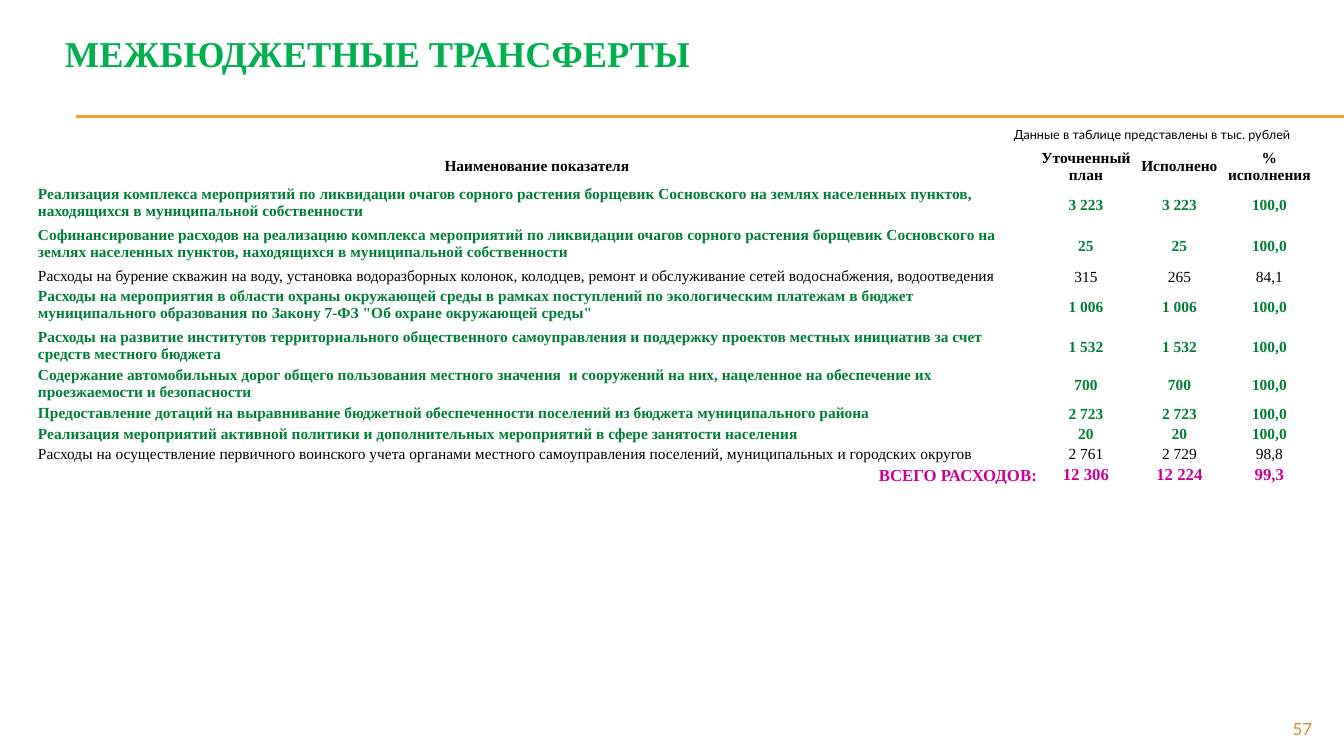
"""Builds the slide on inter-budget transfers with its table of expenses."""
import pptx
import pptx.util
import pptx.dml.color
import pptx.enum.shapes
import pptx.enum.text
import pptx.oxml

PX = 12192000 / 1344
SERIF, SANS = "Times New Roman", "Lato"
HUES = {"title": "00B050", "rule": "F0A22E", "green": "007E39",
        "black": "000000", "total": "CC0099", "page": "D48F29"}
ALIGN = pptx.enum.text.PP_ALIGN
ANCHOR = pptx.enum.text.MSO_ANCHOR


def px(count):
    return round(count * PX)


def write(frame, text, size, face, hue, bold=False, align=ALIGN.LEFT):
    par = frame.paragraphs[0]
    par.alignment = align
    run = par.add_run()
    run.text = text
    run.font.size = pptx.util.Pt(size)
    run.font.name = face
    run.font.bold = bold
    run.font.color.rgb = pptx.dml.color.RGBColor.from_string(HUES[hue])


deck = pptx.Presentation()
deck.slide_width, deck.slide_height = px(1344), px(756)
slide = deck.slides.add_slide(deck.slide_layouts[6])
shapes = slide.shapes

for y in (116, 117):
    rule = shapes.add_connector(pptx.enum.shapes.MSO_CONNECTOR.STRAIGHT,
                                px(76), px(y), px(1344), px(y))
    rule.line.color.rgb = pptx.dml.color.RGBColor.from_string(HUES["rule"])
    rule.line.width = pptx.util.Pt(0.75)
    props = rule.element.spPr
    props.append(pptx.oxml.parse_xml(
        '<a:effectLst xmlns:a="http://schemas.openxmlformats.org/drawingml/2006/main"/>'))

title = shapes.add_textbox(px(55), px(16), px(1221), px(73)).text_frame
title.word_wrap = True
title.vertical_anchor = ANCHOR.MIDDLE
write(title, "МЕЖБЮДЖЕТНЫЕ ТРАНСФЕРТЫ", 26, SERIF, "title", True)

ROWS = [
    (35, "black", True, "Наименование показателя", "Уточненный план", "Исполнено", "% исполнения"),
    (41, "green", True, "Реализация комплекса мероприятий по ликвидации очагов сорного растения борщевик "
     "Сосновского на землях населенных пунктов, находящихся в муниципальной собственности",
     "3 223", "3 223", "100,0"),
    (41, "green", True, "Софинансирование расходов на реализацию комплекса мероприятий по ликвидации очагов "
     "сорного растения борщевик Сосновского на землях населенных пунктов, находящихся в "
     "муниципальной собственности", "25", "25", "100,0"),
    (20, "black", False, "Расходы на бурение скважин на воду, установка водоразборных колонок, колодцев, "
     "ремонт и обслуживание сетей водоснабжения, водоотведения", "315", "265", "84,1"),
    (41, "green", True, "Расходы на мероприятия в области охраны окружающей среды в рамках поступлений по "
     "экологическим платежам в бюджет муниципального образования по Закону 7-ФЗ "
     "\"Об охране окружающей среды\"", "1 006", "1 006", "100,0"),
    (35, "green", True, "Расходы на развитие институтов территориального общественного самоуправления и "
     "поддержку проектов местных инициатив за счет средств местного бюджета",
     "1 532", "1 532", "100,0"),
    (38, "green", True, "Содержание автомобильных дорог общего пользования местного значения  и сооружений "
     "на них, нацеленное на обеспечение их проезжаемости и безопасности", "700", "700", "100,0"),
    (21, "green", True, "Предоставление дотаций на выравнивание бюджетной обеспеченности поселений из "
     "бюджета муниципального района", "2 723", "2 723", "100,0"),
    (19, "green", True, "Реализация мероприятий активной политики и дополнительных мероприятий в сфере "
     "занятости населения", "20", "20", "100,0"),
    (19, "black", False, "Расходы на осуществление первичного воинского учета органами местного "
     "самоуправления поселений, муниципальных и городских округов", "2 761", "2 729", "98,8"),
    (21, "total", True, "ВСЕГО РАСХОДОВ:", "12 306", "12 224", "99,3"),
]
WIDTHS = [1000, 98, 89, 91]
LAST = len(ROWS) - 1

table = shapes.add_table(len(ROWS), len(WIDTHS), px(37), px(148), px(sum(WIDTHS)),
                         px(sum(row[0] for row in ROWS))).table
table.first_row = table.horz_banding = False
for col, width in zip(table.columns, WIDTHS):
    col.width = px(width)

for r, (height, hue, bold, *texts) in enumerate(ROWS):
    table.rows[r].height = px(height)
    for c, text in enumerate(texts):
        cell = table.cell(r, c)
        cell.fill.background()
        item = c == 0 and 0 < r < LAST
        side = px(1) if item else 0
        cell.margin_left = cell.margin_right = cell.margin_top = side
        cell.margin_bottom = 0
        cell.vertical_anchor = ANCHOR.TOP if item else ANCHOR.MIDDLE
        align = ALIGN.LEFT if item else ALIGN.CENTER
        if c == 0 and r == LAST:
            cell.vertical_anchor = ANCHOR.BOTTOM
            align = ALIGN.RIGHT
        write(cell.text_frame, text, 12 if r == LAST else 11, SERIF, hue, bold, align)

page = shapes.add_textbox(px(1210), px(714), px(112), px(27)).text_frame
page.word_wrap = True
write(page, "57", 12, SANS, "page", align=ALIGN.RIGHT)

note = shapes.add_textbox(px(1000), px(122), px(300), px(25)).text_frame
note.word_wrap = False
note.auto_size = pptx.enum.text.MSO_AUTO_SIZE.SHAPE_TO_FIT_TEXT
write(note, "Данные в таблице представлены в тыс. рублей", 9, SANS, "black", align=ALIGN.RIGHT)

deck.save("out.pptx")
